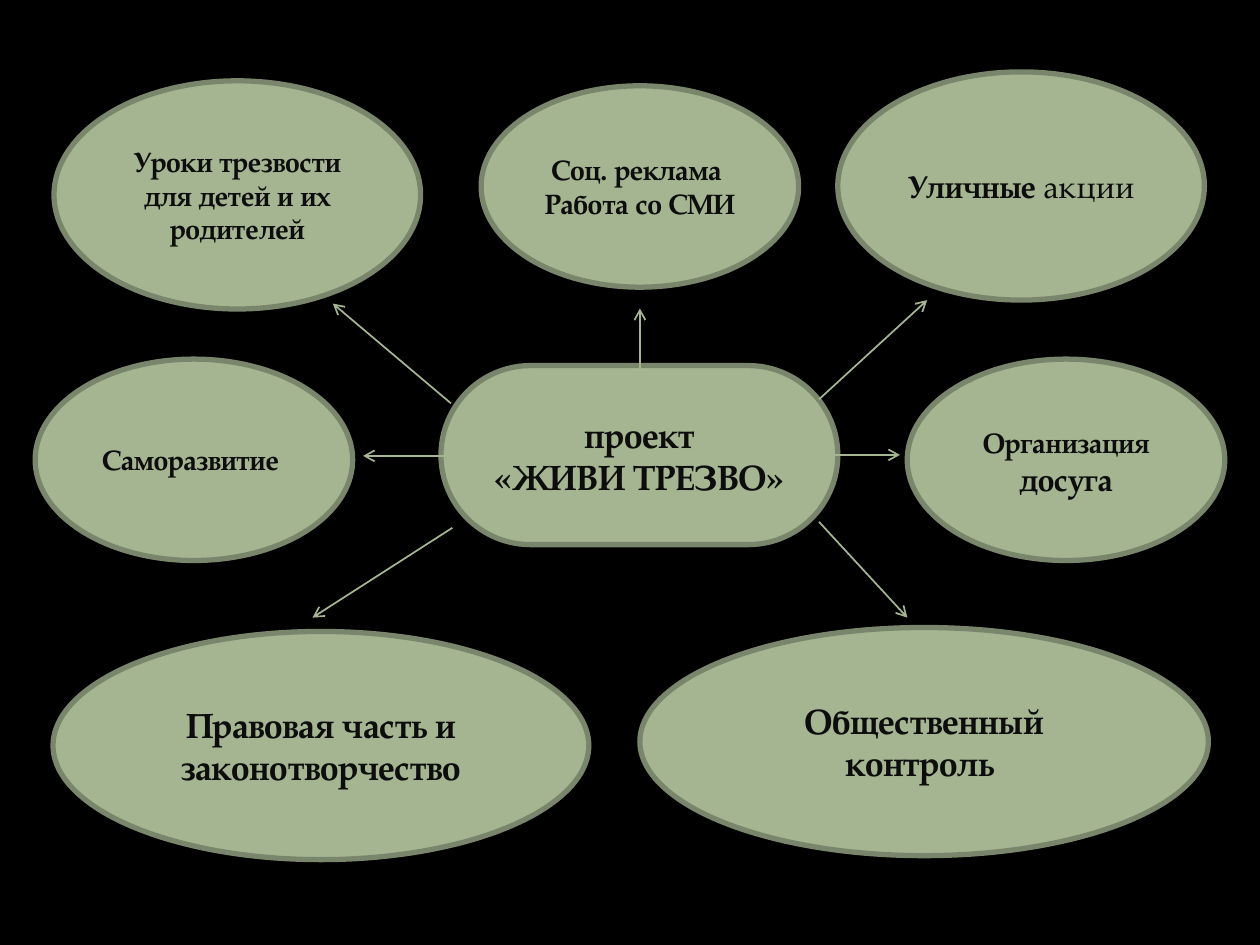
import pptx
import pptx.dml.color
import pptx.enum.shapes
import pptx.enum.text
import pptx.oxml.ns
import pptx.util
from lxml import etree
from pptx.util import Cm

BLACK = pptx.dml.color.RGBColor(0x00, 0x00, 0x00)
INK = pptx.dml.color.RGBColor(0x0D, 0x0D, 0x0D)
SAGE = pptx.dml.color.RGBColor(0xA5, 0xB5, 0x92)
SAGE_DARK = pptx.dml.color.RGBColor(0x7A, 0x86, 0x6C)
FONT = "TeX Gyre Pagella"
OVAL = pptx.enum.shapes.MSO_SHAPE.OVAL
ROUNDED = pptx.enum.shapes.MSO_SHAPE.ROUNDED_RECTANGLE


class MindMap:
    """Holds the style and the current page."""

    def __init__(self, page):
        self.page = page
        page.background.fill.solid()
        page.background.fill.fore_color.rgb = BLACK

    def bubble(self, kind, left, top, width, height, paragraphs):
        """Paragraphs are lists of (text, size, bold) spans."""
        box = self.page.shapes.add_shape(kind, Cm(left), Cm(top), Cm(width), Cm(height))
        box.shadow.inherit = False
        box.fill.solid()
        box.fill.fore_color.rgb = SAGE
        box.line.color.rgb = SAGE_DARK
        box.line.width = pptx.util.Pt(3)
        frame = box.text_frame
        frame.word_wrap = True
        frame.vertical_anchor = pptx.enum.text.MSO_ANCHOR.MIDDLE
        for index, spans in enumerate(paragraphs):
            para = frame.add_paragraph() if index else frame.paragraphs[0]
            para.alignment = pptx.enum.text.PP_ALIGN.CENTER
            for text, size, bold in spans:
                self.span(para, text, size, bold)
        return box

    def span(self, para, text, size, bold):
        span = para.add_run()
        span.text = text
        span.font.name = FONT
        span.font.size = pptx.util.Pt(size)
        span.font.bold = bold
        span.font.color.rgb = INK

    def arrow(self, *ends):
        arrow = self.page.shapes.add_connector(
            pptx.enum.shapes.MSO_CONNECTOR.STRAIGHT, *map(Cm, ends))
        arrow.line.color.rgb = SAGE
        arrow.line.width = pptx.util.Pt(1)
        # Arrowhead at the far end, no shadow
        qn = pptx.oxml.ns.qn
        etree.SubElement(arrow.line._get_or_add_ln(), qn("a:tailEnd"), type="arrow")
        etree.SubElement(arrow._element.spPr, qn("a:effectLst"))


def main():
    deck = pptx.Presentation()
    deck.slide_width, deck.slide_height = Cm(25.4), Cm(19.05)
    mind_map = MindMap(deck.slides.add_slide(deck.slide_layouts[6]))

    # Project in the centre
    centre = mind_map.bubble(ROUNDED, 8.89, 7.37, 8, 3.61, [
        [("проект", 20, True)], [("«ЖИВИ ТРЕЗВО»", 20, True)]])
    centre.adjustments[0] = 0.5

    # Arrows from the centre to each activity
    for ends in [
        (9.09, 8.13, 6.71, 6.12),
        (9.12, 9.19, 7.32, 9.19),
        (12.9, 8.05, 12.9, 6.22),
        (16.51, 8.05, 18.69, 6.05),
        (9.12, 10.64, 6.3, 12.45),
        (16.51, 10.52, 18.29, 12.45),
        (16.23, 9.17, 18.14, 9.17),
    ]:
        mind_map.arrow(*ends)

    # Activities around it
    large, small = (7.39, 4.6), (6.4, 4.06)
    for left, top, size, paragraphs in [
        (1.09, 1.63, large, [[("Уроки трезвости", 16, True)],
                             [("для детей и их родителей", 16, True)]]),
        (16.89, 1.45, large, [[("Уличные", 18, True), (" акции", 18, False)]]),
        (1.07, 12.73, (10.8, 4.6), [[("Правовая часть и законотворчество", 20, True)]]),
        (12.9, 12.65, (11.46, 4.6), [[("Общественный контроль ", 20, True)]]),
        (9.7, 1.73, small, [[("Соц. реклама ", 16, True)],
                            [("Работа со СМИ", 16, True)]]),
        (0.71, 7.24, small, [[("Саморазвитие ", 16, True)]]),
        (18.29, 7.24, small, [[("Организация", 16, True), (" досуга", 18, True)]]),
    ]:
        mind_map.bubble(OVAL, left, top, *size, paragraphs)

    deck.save("out.pptx")


if __name__ == "__main__":
    main()
